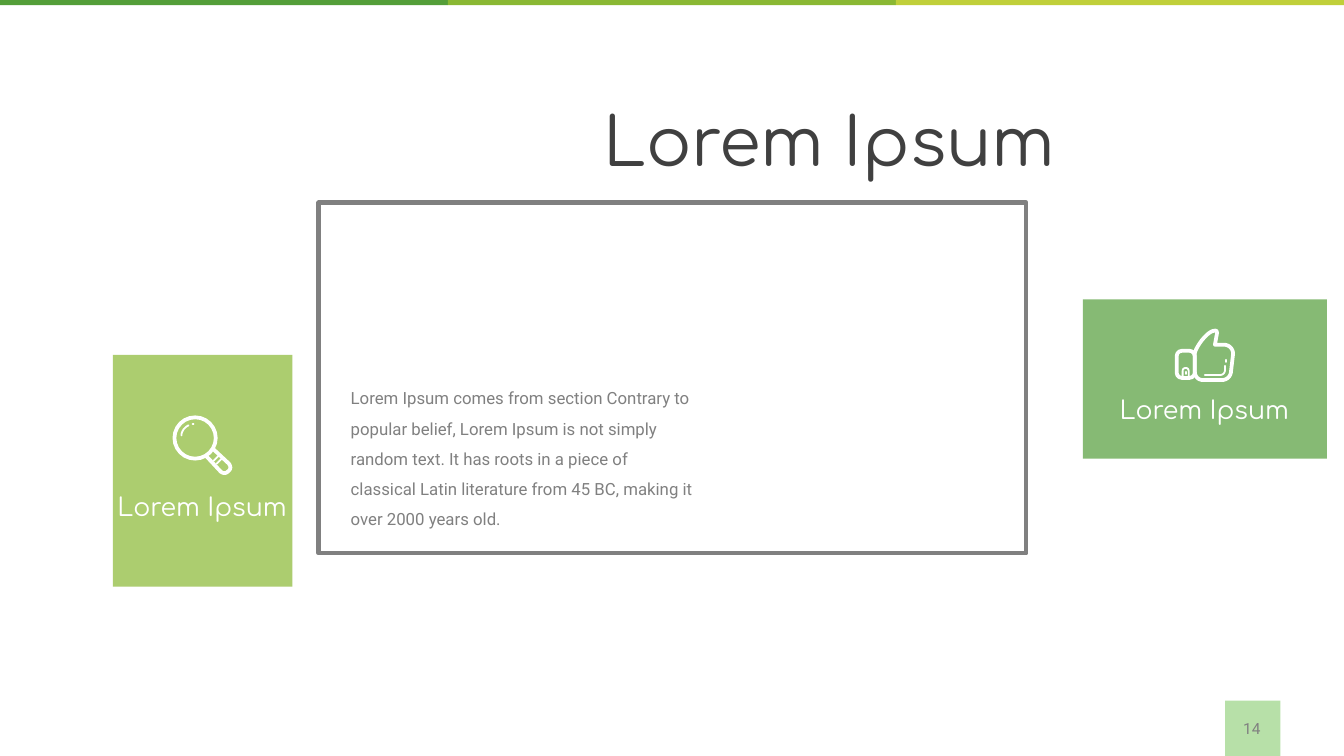
from lxml.etree import SubElement
from pptx import Presentation
from pptx.dml.color import RGBColor
from pptx.enum.shapes import MSO_CONNECTOR as Link, MSO_SHAPE as Kind
from pptx.enum.text import MSO_ANCHOR as Anchor, MSO_AUTO_SIZE as Fit, PP_ALIGN as Align
from pptx.oxml.ns import qn
from pptx.util import Inches, Pt

HEAD, BODY = "Comfortaa", "Roboto"
GRAY, DARK, WHITE = "808080", "404040", "FFFFFF"
GREEN, LIME, GOLD, MINT = "549E39", "8AB833", "C0CF3A", "B7E0A8"
THICK, THIN = 2.7, 1.3


def tint(code):
    return RGBColor.from_string(code)


def trace(start, steps, count=10):
    """Turn points and cubic curves (three points each) into one list of points."""
    spots = [start]
    for step in steps:
        if len(step) == 2:
            spots.append(step)
            continue
        a, (b, c, d) = spots[-1], step
        for i in range(1, count + 1):
            t = i / count
            u = 1 - t
            spots.append(tuple(
                u**3 * a[k] + 3 * u * u * t * b[k] + 3 * u * t * t * c[k] + t**3 * d[k]
                for k in (0, 1)))
    return [(Inches(x), Inches(y)) for x, y in spots]


class Page:
    def __init__(self, deck):
        self.slide = deck.slides.add_slide(deck.slide_layouts[5])
        self.shapes = self.slide.shapes

    def shape(self, kind, box, fill=None, alpha=None, line=None, width=THICK):
        item = self.shapes.add_shape(kind, *map(Inches, box))
        item.shadow.inherit = False
        if fill:
            item.fill.solid()
            item.fill.fore_color.rgb = tint(fill)
        else:
            item.fill.background()
        if alpha:
            color = item._element.spPr.find(qn("a:solidFill"))[0]
            SubElement(color, qn("a:alpha")).set("val", str(alpha * 1000))
        if line:
            self.ink(item, line, width)
        else:
            item.line.fill.background()
        return item

    def ink(self, item, color, width):
        item.line.color.rgb = tint(color)
        item.line.width = Pt(width)

    def cap(self, item):
        """Round the ends of a line."""
        item._element.spPr.find(qn("a:ln")).set("cap", "rnd")

    def curve(self, start, steps, width=THIN, close=False):
        spots = trace(start, steps)
        pen = self.shapes.build_freeform(*spots[0])
        pen.add_line_segments(spots[1:], close=close)
        item = pen.convert_to_shape()
        item.shadow.inherit = False
        item.fill.background()
        self.ink(item, WHITE, width)
        self.cap(item)

    def dash(self, *ends):
        item = self.shapes.add_connector(Link.STRAIGHT, *map(Inches, ends))
        self.ink(item, WHITE, THIN)
        self.cap(item)
        SubElement(item._element.spPr, qn("a:effectLst"))

    def words(self, frame, text, size, font, color, align=Align.LEFT, wrap=False, space=1.0):
        frame.word_wrap = wrap
        frame.auto_size = Fit.NONE
        frame.vertical_anchor = Anchor.TOP
        para = frame.paragraphs[0]
        para.alignment = align
        para.line_spacing = space
        run = para.add_run()
        run.text = text
        run.font.size = Pt(size)
        run.font.name = font
        run.font.color.rgb = tint(color)

    def text(self, box, *args, **style):
        item = self.shapes.add_textbox(*map(Inches, box))
        self.words(item.text_frame, *args, **style)

    def title(self, box, *args):
        item = self.shapes.title
        item.left, item.top, item.width, item.height = map(Inches, box)
        self.words(item.text_frame, *args)

    def card(self, box, fill, label):
        self.shape(Kind.RECTANGLE, box, fill, alpha=70)
        self.text(label, "Lorem Ipsum", 18, HEAD, WHITE, align=Align.CENTER)

    def thumb(self):
        self.curve((12.05, 3.28), [
            ((12.07, 3.28), (12.07, 3.29), (12.07, 3.31)),
            (12.05, 3.42), (12.14, 3.42),
            ((12.19, 3.42), (12.23, 3.46), (12.23, 3.51)),
            (12.21, 3.68),
            ((12.21, 3.73), (12.17, 3.77), (12.12, 3.77)),
            (11.93, 3.77),
            ((11.88, 3.77), (11.85, 3.73), (11.85, 3.68)),
            (11.85, 3.51),
            ((11.85, 3.46), (11.97, 3.28), (12.05, 3.28)),
        ], THICK, close=True)
        self.curve((11.95, 3.72), [
            (12.1, 3.72), ((12.13, 3.72), (12.15, 3.7), (12.15, 3.67)), (12.15, 3.63)])
        self.dash(12.16, 3.57, 12.16, 3.59)
        cuff = self.shape(Kind.ROUNDED_RECTANGLE, (11.67, 3.48, 0.18, 0.27), line=WHITE)
        cuff.adjustments[0] = 0.3
        self.curve((11.73, 3.73), [
            (11.73, 3.68), ((11.73, 3.64), (11.79, 3.64), (11.79, 3.68)), (11.79, 3.73)])
        self.dash(11.76, 3.69, 11.76, 3.71)

    def lens(self):
        self.curve((2.05, 4.53), [
            (2.19, 4.68),
            ((2.22, 4.7), (2.24, 4.7), (2.27, 4.67)),
            ((2.29, 4.65), (2.29, 4.63), (2.27, 4.6)),
            (2.12, 4.46),
        ], THICK)
        self.shape(Kind.OVAL, (1.73, 4.14, 0.41, 0.41), line=WHITE)
        self.curve((1.8, 4.32), [((1.8, 4.28), (1.83, 4.24), (1.87, 4.22))])
        self.dash(1.91, 4.21, 1.92, 4.21)
        for shift in (0, 0.03):
            self.dash(2.12 + shift, 4.57 + shift, 2.17 + shift, 4.52 + shift)


def main():
    deck = Presentation()
    deck.slide_width, deck.slide_height = Inches(13.33), Inches(7.5)
    page = Page(deck)

    page.shape(Kind.RECTANGLE, (12.15, 6.95, 0.55, 0.55), MINT)
    third = 13.33 / 3
    for i, color in enumerate((GREEN, LIME, GOLD)):
        page.shape(Kind.RECTANGLE, (i * third, 0, third, 0.05), color)
    page.text((12.22, 7.08, 0.39, 0.29), "14", 11, BODY, GRAY, align=Align.CENTER)

    page.shape(Kind.RECTANGLE, (3.16, 2.01, 7.02, 3.48), line=GRAY, width=3)
    page.title((5.89, 0.94, 4.76, 0.91), "Lorem Ipsum", 48, HEAD, DARK)
    page.text(
        (3.38, 3.7, 3.63, 1.62),
        "Lorem Ipsum comes from section Contrary to popular belief, Lorem Ipsum is not "
        "simply random text. It has roots in a piece of classical Latin literature from "
        "45 BC, making it over 2000 years old.",
        12, BODY, GRAY, wrap=True, space=1.5)

    page.card((10.74, 2.97, 2.42, 1.58), GREEN, (10.99, 3.86, 1.91, 0.71))
    page.thumb()
    page.card((1.12, 3.52, 1.78, 2.3), LIME, (1.05, 4.82, 1.91, 0.71))
    page.lens()
    deck.save("out.pptx")


if __name__ == "__main__":
    main()
